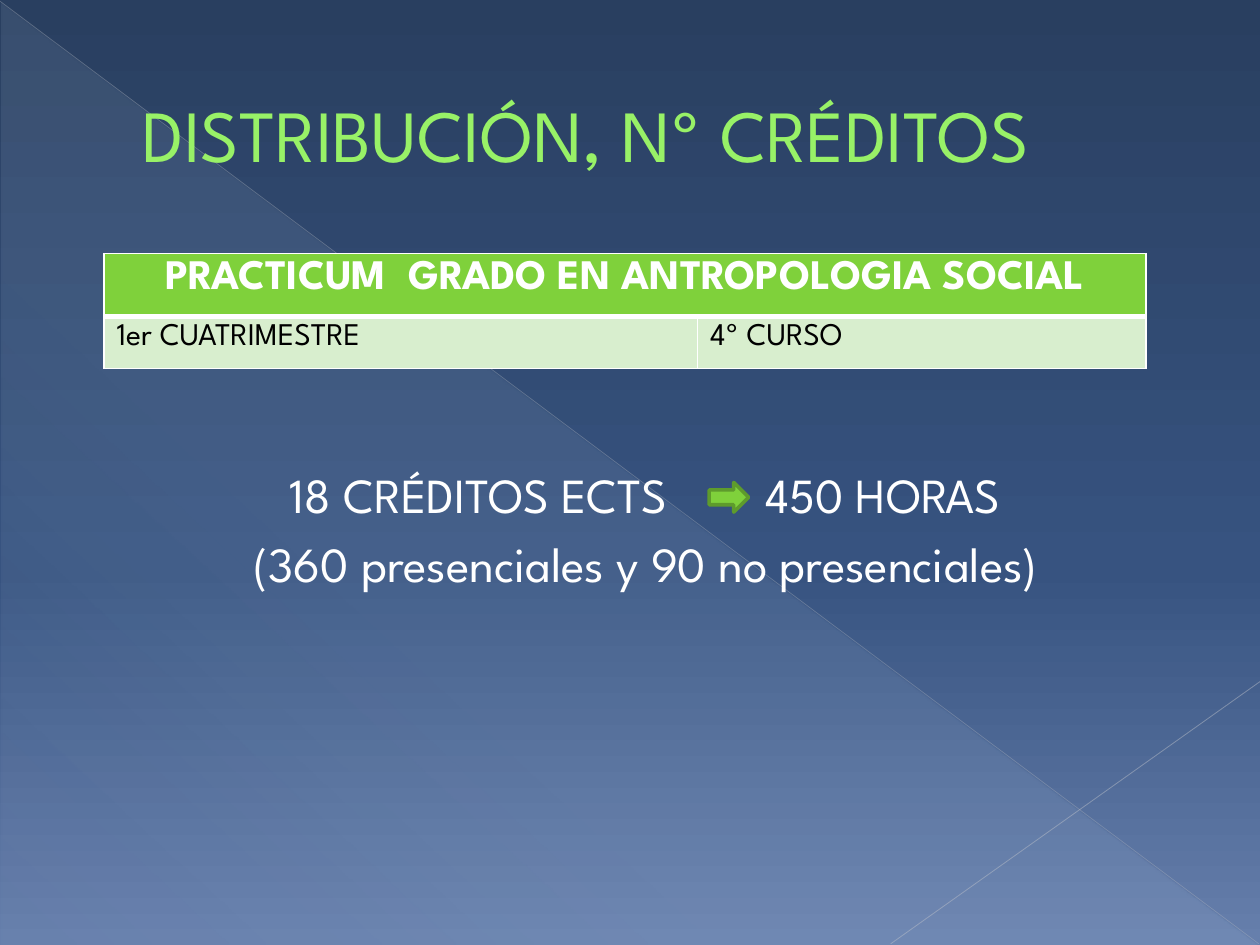
from pptx import Presentation
from pptx.dml.color import RGBColor
from pptx.enum.shapes import MSO_CONNECTOR as Connector, MSO_SHAPE as Shape
from pptx.enum.text import MSO_ANCHOR as Anchor, MSO_AUTO_SIZE as AutoSize, PP_ALIGN as Align
from pptx.oxml.ns import qn
from pptx.util import Pt
from lxml.etree import SubElement

FONT = "League Spartan"
WHITE = "FFFFFF"
GREEN = "7FD13B"


def color(value):
    return RGBColor.from_string(value)


def add_color(parent, value, opacity=100):
    node = SubElement(parent, qn("a:srgbClr"), val=value)
    if opacity < 100:
        SubElement(node, qn("a:alpha"), val=str(opacity * 1000))


def format_runs(para, size, value, bold=False):
    for span in para.runs:
        span.font.name = FONT
        span.font.size = Pt(size)
        span.font.bold = bold
        span.font.color.rgb = color(value)


def clear_margins(frame):
    frame.margin_left = frame.margin_right = frame.margin_top = frame.margin_bottom = 0


def set_gradient(fill, element, stops, angle):
    fill.gradient()
    gradient = next(element.iter(qn("a:gradFill")))
    for child in list(gradient):
        gradient.remove(child)
    stop_list = SubElement(gradient, qn("a:gsLst"))
    for position, value, opacity in stops:
        stop = SubElement(stop_list, qn("a:gs"), pos=str(position * 1000))
        add_color(stop, value, opacity)
    SubElement(gradient, qn("a:lin"), ang=str(angle * 60000), scaled="0")


def add_line(page, start, end, value, width, opacity):
    line = page.shapes.add_connector(Connector.STRAIGHT, *map(Pt, start + end))
    line.line.width = Pt(width)
    line.line.color.rgb = color(value)
    tint = next(line.element.iter(qn("a:srgbClr")))
    SubElement(tint, qn("a:alpha"), val=str(opacity * 1000))
    SubElement(line.element.spPr, qn("a:effectLst"))


def add_backdrop(page):
    set_gradient(page.background.fill, page.element,
                 [(0, "293F60", 100), (60, "375380", 100), (100, "667FAC", 100)], 90)
    triangle = page.shapes.add_shape(Shape.RIGHT_TRIANGLE, Pt(0.7), Pt(1.4), Pt(718.6), Pt(538.6))
    triangle.shadow.inherit = False
    triangle.line.fill.background()
    set_gradient(triangle.fill, triangle.element,
                 [(0, "D6ECFF", 10), (70, "D6ECFF", 8), (100, "D6ECFF", 1)], 133)
    add_line(page, (0, 0.7), (719.3, 539.3), "B7BCC5", 0.39, 35)
    add_line(page, (720, 389.5), (509, 539.3), "BFC3CB", 0.47, 45)


def set_title(page, text):
    title = page.shapes.title
    title.element.getparent().append(title.element)
    title.left, title.top, title.width, title.height = Pt(36), Pt(21), Pt(648), Pt(110)
    frame = title.text_frame
    frame.text = text
    frame.word_wrap = True
    frame.auto_size = AutoSize.NONE
    frame.vertical_anchor = Anchor.MIDDLE
    frame.margin_left = Pt(45.4)
    para = frame.paragraphs[0]
    para.alignment = Align.LEFT
    format_runs(para, 42, "98F167")
    properties = next(title.element.iter(qn("a:rPr")))
    outline = properties.makeelement(qn("a:ln"), {"w": str(Pt(0.5))})
    properties.insert(0, outline)
    add_color(SubElement(outline, qn("a:solidFill")), "589129")


def set_borders(cell, bottom=1):
    properties = cell._tc.get_or_add_tcPr()
    for side, width in (("L", 1), ("R", 1), ("T", 1), ("B", bottom)):
        border = SubElement(properties, qn(f"a:ln{side}"), w=str(Pt(width)))
        add_color(SubElement(border, qn("a:solidFill")), WHITE)


def fill_cell(cell, text, fill, size, value, bold=False, align=Align.LEFT):
    cell.vertical_anchor = Anchor.TOP
    cell.margin_top = cell.margin_bottom = Pt(3.6)
    cell.fill.solid()
    cell.fill.fore_color.rgb = color(fill)
    cell.text = text
    para = cell.text_frame.paragraphs[0]
    para.alignment = align
    format_runs(para, size, value, bold)


def add_course_table(page):
    frame = page.shapes.add_table(2, 2, Pt(59.5), Pt(145), Pt(595.4), Pt(59))
    table = frame.table
    table.first_row = table.horz_banding = False
    for column, width in zip(table.columns, (339.1, 256.3)):
        column.width = Pt(width)
    for index, row in enumerate(table.rows):
        row.height = Pt(29.5)
        for cell in row.cells:
            set_borders(cell, 1 if index else 3)
    header = table.cell(0, 0)
    header.merge(table.cell(0, 1))
    fill_cell(header, "PRACTICUM  GRADO EN ANTROPOLOGIA SOCIAL", GREEN, 24, WHITE, True, Align.CENTER)
    for index, text in enumerate(("1er CUATRIMESTRE", "4º CURSO")):
        fill_cell(table.cell(1, index), text, "D8EECE", 18, "000000")


def add_tab_stops(para, positions):
    tabs = SubElement(para._p.get_or_add_pPr(), qn("a:tabLst"))
    for position in positions:
        SubElement(tabs, qn("a:tab"), pos=str(Pt(position)), algn="l")


def add_credits(page):
    box = page.shapes.add_textbox(Pt(61), Pt(265.4), Pt(616), Pt(80))
    frame = box.text_frame
    frame.word_wrap = True
    clear_margins(frame)
    frame.text = "\t18 CRÉDITOS ECTS\t450 HORAS\n(360 presenciales y 90 no presenciales)"
    hours, split = frame.paragraphs
    hours.alignment = Align.LEFT
    hours.space_after = Pt(5.6)
    add_tab_stops(hours, (104.5, 376.5))
    split.alignment = Align.CENTER
    for para in frame.paragraphs:
        format_runs(para, 28, WHITE)


def add_arrow(page):
    arrow = page.shapes.add_shape(Shape.RIGHT_ARROW, Pt(405.3), Pt(275.7), Pt(22.5), Pt(17))
    arrow.shadow.inherit = False
    arrow.fill.solid()
    arrow.fill.fore_color.rgb = color(GREEN)
    arrow.line.color.rgb = color("5E9B2C")
    arrow.line.width = Pt(2)


def main():
    deck = Presentation()
    deck.slide_width, deck.slide_height = Pt(720), Pt(540)
    page = deck.slides.add_slide(deck.slide_layouts[5])
    add_backdrop(page)
    set_title(page, "DISTRIBUCIÓN, Nº CRÉDITOS")
    add_credits(page)
    add_course_table(page)
    add_arrow(page)
    deck.save("out.pptx")


if __name__ == "__main__":
    main()
